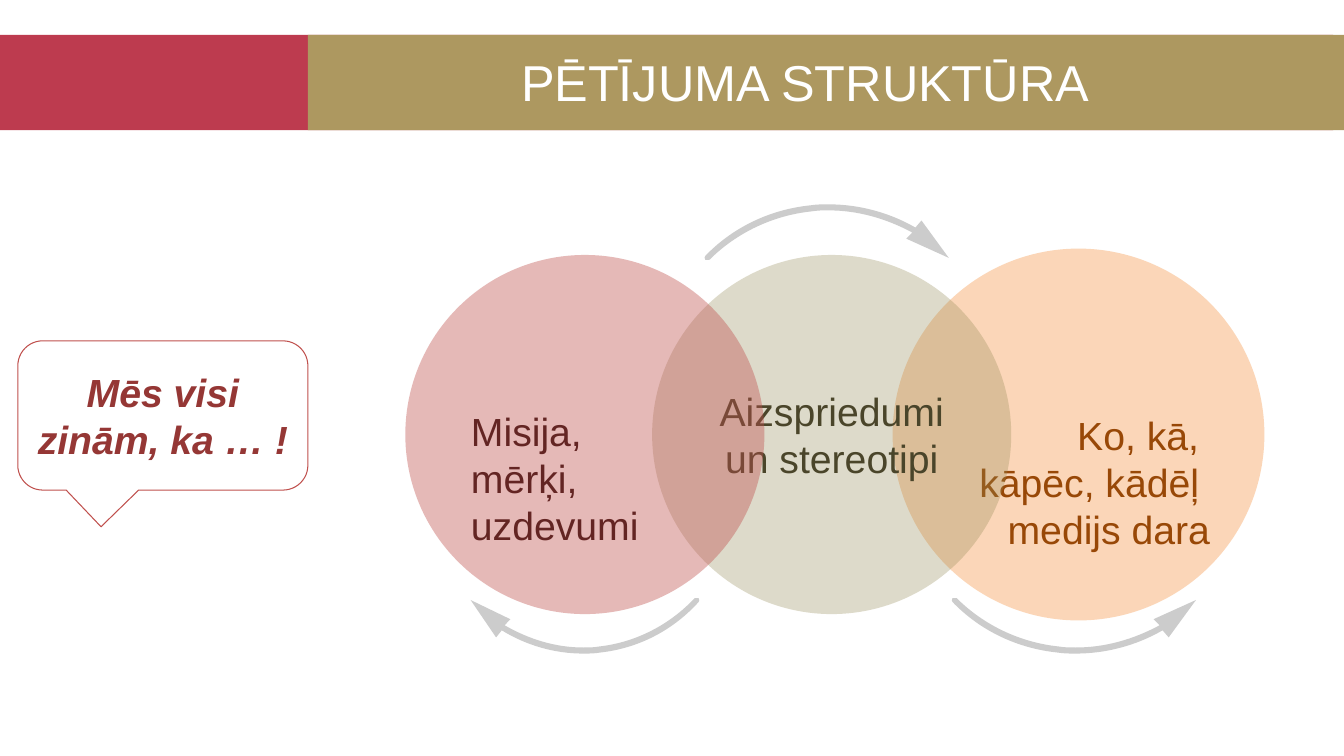
from dataclasses import dataclass

from lxml.etree import SubElement
from pptx import Presentation
from pptx.dml.color import RGBColor
from pptx.enum.shapes import MSO_SHAPE as SHAPE
from pptx.enum.text import MSO_ANCHOR as ANCHOR, MSO_AUTO_SIZE as AUTO, PP_ALIGN as ALIGN
from pptx.oxml.ns import qn
from pptx.util import Cm, Pt


@dataclass(frozen=True)
class Theme:
    font: str = "Arial"
    title_size: int = 36
    body_size: int = 28
    white: str = "FFFFFF"
    red_bar: str = "BD3B4F"
    gold_bar: str = "AD9860"
    arrow: str = "CCCCCC"
    callout_line: str = "C0504D"
    callout_text: str = "953735"
    pink: str = "C0504D"
    pink_text: str = "632523"
    olive: str = "948A54"
    olive_text: str = "4A452A"
    orange: str = "FAC090"
    orange_text: str = "984807"


T = Theme()

# Curved arrow on a 242 x 55 grid: one point makes a line, three a Bezier curve
ARROW_GRID = (242, 55)
ARROW_START = (3, 0)
ARROW_STEPS = [
    [(3, 0), (2, 0), (1, 0)],
    [(0, 2), (0, 3), (1, 4)],
    [(29, 33), (66, 50), (105, 54)],
    [(111, 55), (117, 55), (123, 55)],
    [(153, 55), (183, 47), (209, 32)],
    [(215, 39)], [(242, 2)], [(200, 21)], [(206, 27)],
    [(180, 41), (152, 49), (123, 49)],
    [(117, 49), (112, 49), (106, 48)],
    [(68, 44), (32, 27), (5, 0)],
    [(5, 0), (4, 0), (3, 0)],
]


def rgb(color):
    return RGBColor.from_string(color)


def write(sp, text, *, color, size=T.body_size, align=ALIGN.LEFT, anchor=ANCHOR.MIDDLE,
          inset=(0.25, 0.13), wrap=True, bold=False, italic=False):
    """Put text in a shape, one paragraph per line; inset is (sides, top and bottom) in cm."""
    tf = sp.text_frame
    tf.text = text
    tf.word_wrap = wrap
    tf.auto_size = AUTO.NONE
    tf.vertical_anchor = anchor
    tf.margin_left = tf.margin_right = Cm(inset[0])
    tf.margin_top = tf.margin_bottom = Cm(inset[1])
    for p in tf.paragraphs:
        p.alignment = align
        for r in p.runs:
            r.font.name = T.font
            r.font.size = Pt(size)
            r.font.bold = bold
            r.font.italic = italic
            r.font.color.rgb = rgb(color)


def paint(sp, fill, line=None, opacity=100):
    sp.shadow.inherit = False
    sp.fill.solid()
    sp.fill.fore_color.rgb = rgb(fill)
    if opacity < 100:
        clr = sp.element.spPr.find(".//" + qn("a:srgbClr"))
        SubElement(clr, qn("a:alpha"), val=str(opacity * 1000))
    if line:
        sp.line.color.rgb = rgb(line)
        sp.line.width = Pt(0.75)
    else:
        sp.line.fill.background()


def add_shape(slide, kind, box, fill, **look):
    sp = slide.shapes.add_shape(kind, *map(Cm, box))
    paint(sp, fill, **look)
    return sp


def add_title(slide, text):
    sp = slide.shapes.title
    slide.shapes.element.append(sp.element)  # in front of the bars
    sp.left, sp.top, sp.width, sp.height = map(Cm, (8.46, 1.09, 23.67, 1.93))
    write(sp, text, color=T.white, size=T.title_size, align=ALIGN.CENTER, inset=(0, 0))


def add_callout(slide, text):
    sp = add_shape(slide, SHAPE.ROUNDED_RECTANGULAR_CALLOUT, (0.45, 8.59, 7.31, 3.76),
                   T.white, line=T.callout_line)
    for i, value in enumerate((-0.213, 0.746, 0.167)):
        sp.adjustments[i] = value
    write(sp, text, color=T.callout_text, align=ALIGN.CENTER, bold=True, italic=True)


def add_circle(slide, column, size, fill, opacity, text, **text_format):
    cx, cy = 14.74 + 6.22 * column, 10.95
    box = (cx - size / 2, cy - size / 2, size, size)
    sp = add_shape(slide, SHAPE.OVAL, box, fill, opacity=opacity)
    write(sp, text, **text_format)


def add_arrow(slide, left, top, width, flip_x=False, flip_y=False):
    height = 1.4
    grid_w, grid_h = ARROW_GRID

    def place(point):
        x, y = point
        x = grid_w - x if flip_x else x
        y = grid_h - y if flip_y else y
        return Cm(left + x * width / grid_w), Cm(top + y * height / grid_h)

    builder = slide.shapes.build_freeform(*place(ARROW_START))
    builder.add_line_segments([place(step[-1]) for step in ARROW_STEPS], close=True)
    sp = builder.convert_to_shape()

    # Turn the segments with control points into Bezier curves
    segments = list(sp.element.spPr.iter(qn("a:lnTo")))
    for segment, step in zip(segments, ARROW_STEPS):
        if len(step) == 3:
            curve = segment.getparent().makeelement(qn("a:cubicBezTo"))
            for x, y in map(place, step):
                SubElement(curve, qn("a:pt"), x=str(x - sp.left), y=str(y - sp.top))
            segment.getparent().replace(segment, curve)
    paint(sp, T.arrow)


def main():
    prs = Presentation()
    prs.slide_width, prs.slide_height = Cm(33.87), Cm(19.05)
    slide = prs.slides.add_slide(prs.slide_layouts[5])

    # Header
    add_shape(slide, SHAPE.RECTANGLE, (0, 0.88, 33.6, 2.4), T.red_bar)
    add_shape(slide, SHAPE.RECTANGLE, (7.76, 0.88, 26.11, 2.4), T.gold_bar)
    add_title(slide, "PĒTĪJUMA STRUKTŪRA")

    # Quote
    add_callout(slide, "Mēs visi zinām, ka … !")

    # Overlapping circles, the right one at the back
    add_circle(slide, 2, 9.37, T.orange, 64, "Ko, kā, \nkāpēc, kādēļ \nmedijs dara",
               color=T.orange_text, align=ALIGN.RIGHT, anchor=ANCHOR.BOTTOM,
               inset=(0, 0.33), wrap=False)
    add_circle(slide, 1, 9.05, T.olive, 31, "Aizspriedumi un stereotipi",
               color=T.olive_text, align=ALIGN.CENTER, inset=(0.33, 0.33))
    add_circle(slide, 0, 9.05, T.pink, 40, "Misija, mērķi, uzdevumi",
               color=T.pink_text, anchor=ANCHOR.BOTTOM, inset=(0.33, 0.33))

    # Arrows between the circles
    add_arrow(slide, 11.86, 15.07, 5.77, flip_x=True)
    add_arrow(slide, 23.98, 15.07, 6.16)
    add_arrow(slide, 17.75, 5.15, 6.16, flip_y=True)

    prs.save("out.pptx")


if __name__ == "__main__":
    main()
